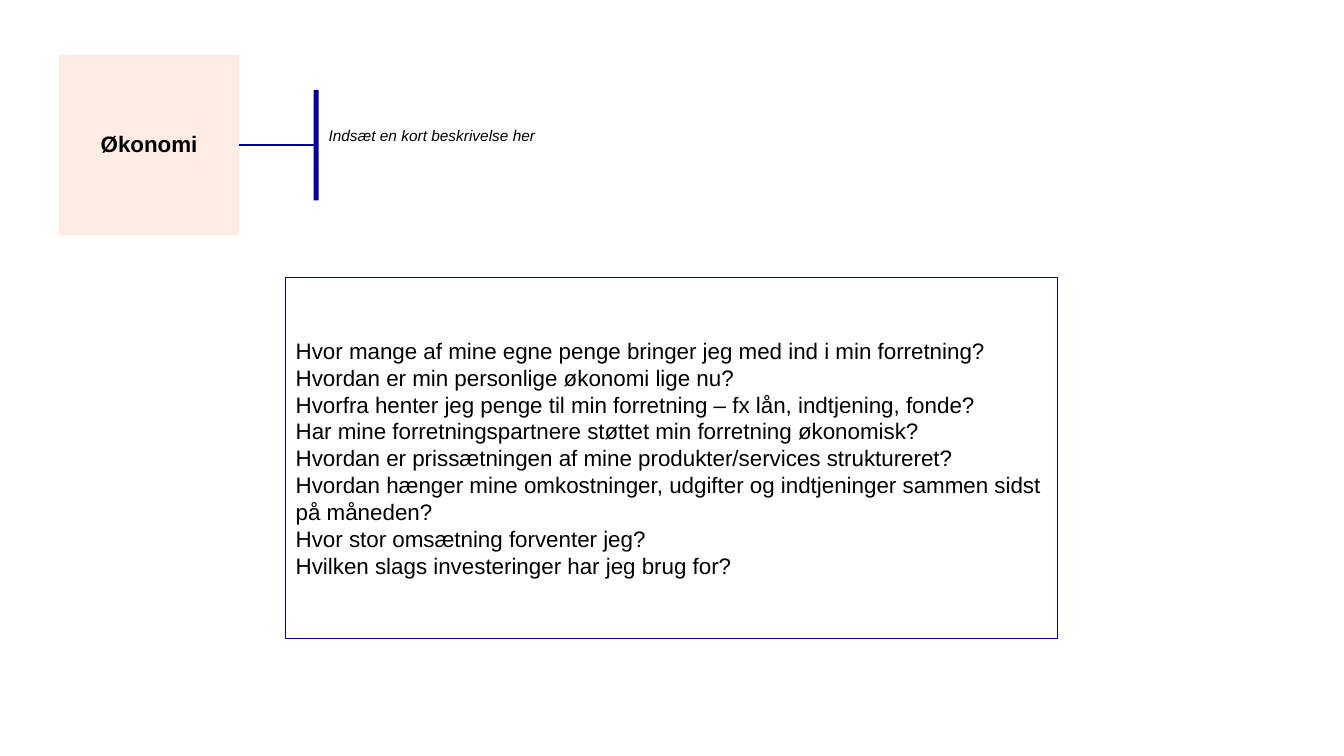
from lxml.etree import SubElement
from pptx import Presentation
from pptx.dml.color import RGBColor
from pptx.enum.shapes import MSO_CONNECTOR as Connector, MSO_SHAPE as Shape
from pptx.enum.text import MSO_ANCHOR as Anchor, MSO_AUTO_SIZE as AutoSize, PP_ALIGN as Align
from pptx.oxml.ns import qn
from pptx.util import Pt

NAVY = RGBColor(0x03, 0x00, 0x9F)
PEACH = RGBColor(0xFD, 0xEC, 0xE3)
BLACK = RGBColor(0, 0, 0)

QUESTIONS = [
    "Hvor mange af mine egne penge bringer jeg med ind i min forretning?",
    "Hvordan er min personlige økonomi lige nu?",
    "Hvorfra henter jeg penge til min forretning – fx lån, indtjening, fonde?",
    "Har mine forretningspartnere støttet min forretning økonomisk?",
    "Hvordan er prissætningen af mine produkter/services struktureret?",
    "Hvordan hænger mine omkostninger, udgifter og indtjeninger sammen sidst på måneden?",
    "Hvor stor omsætning forventer jeg?",
    "Hvilken slags investeringer har jeg brug for?",
]


def place(shape, left, top, width, height):
    shape.left, shape.top = Pt(left), Pt(top)
    shape.width, shape.height = Pt(width), Pt(height)


def format_text(paragraph, size):
    paragraph.font.name = "Arial"
    paragraph.font.size = Pt(size)
    paragraph.font.color.rgb = BLACK


presentation = Presentation()
presentation.slide_width = Pt(960)
presentation.slide_height = Pt(540)
slide = presentation.slides.add_slide(presentation.slide_layouts[1])

title = slide.shapes.title
place(title, 42, 39.2, 129, 129)
title.fill.solid()
title.fill.fore_color.rgb = PEACH
title_frame = title.text_frame
title_frame.text = "Økonomi"
title_frame.auto_size = AutoSize.NONE
title_frame.vertical_anchor = Anchor.MIDDLE
title_frame.margin_left = title_frame.margin_right = 0
heading = title_frame.paragraphs[0]
heading.alignment = Align.CENTER
heading.line_spacing = 0.9
heading.font.bold = True
format_text(heading, 16)

questions = slide.placeholders[1]
place(questions, 204, 198, 551.5, 258)
questions.line.color.rgb = NAVY
questions.line.width = Pt(1)
question_frame = questions.text_frame
question_frame.text = "\n".join(QUESTIONS)
question_frame.auto_size = AutoSize.NONE
question_frame.vertical_anchor = Anchor.MIDDLE
for paragraph in question_frame.paragraphs:
    paragraph.space_before = Pt(0)
    format_text(paragraph, 16)
    properties = paragraph._p.get_or_add_pPr()
    properties.set("marL", "0")
    properties.set("indent", "0")
    SubElement(properties, qn("a:buNone"))

bar = slide.shapes.add_shape(Shape.RECTANGLE, Pt(224), Pt(64.3), Pt(3.6), Pt(78.8))
bar.shadow.inherit = False
bar.fill.solid()
bar.fill.fore_color.rgb = NAVY
bar.line.fill.background()

connector = slide.shapes.add_connector(Connector.STRAIGHT, 0, 0, 0, 0)
connector.begin_connect(bar, 1)
connector.end_connect(title, 3)
connector.line.color.rgb = NAVY
connector.line.width = Pt(1)
SubElement(connector._element.spPr, qn("a:effectLst"))

description = slide.shapes.add_textbox(Pt(227.6), Pt(86.4), Pt(273.6), Pt(20.6))
description_frame = description.text_frame
description_frame.word_wrap = True
description_frame.auto_size = AutoSize.SHAPE_TO_FIT_TEXT
description_frame.text = "Indsæt en kort beskrivelse her"
description_frame.paragraphs[0].font.italic = True
format_text(description_frame.paragraphs[0], 11)

presentation.save("out.pptx")
